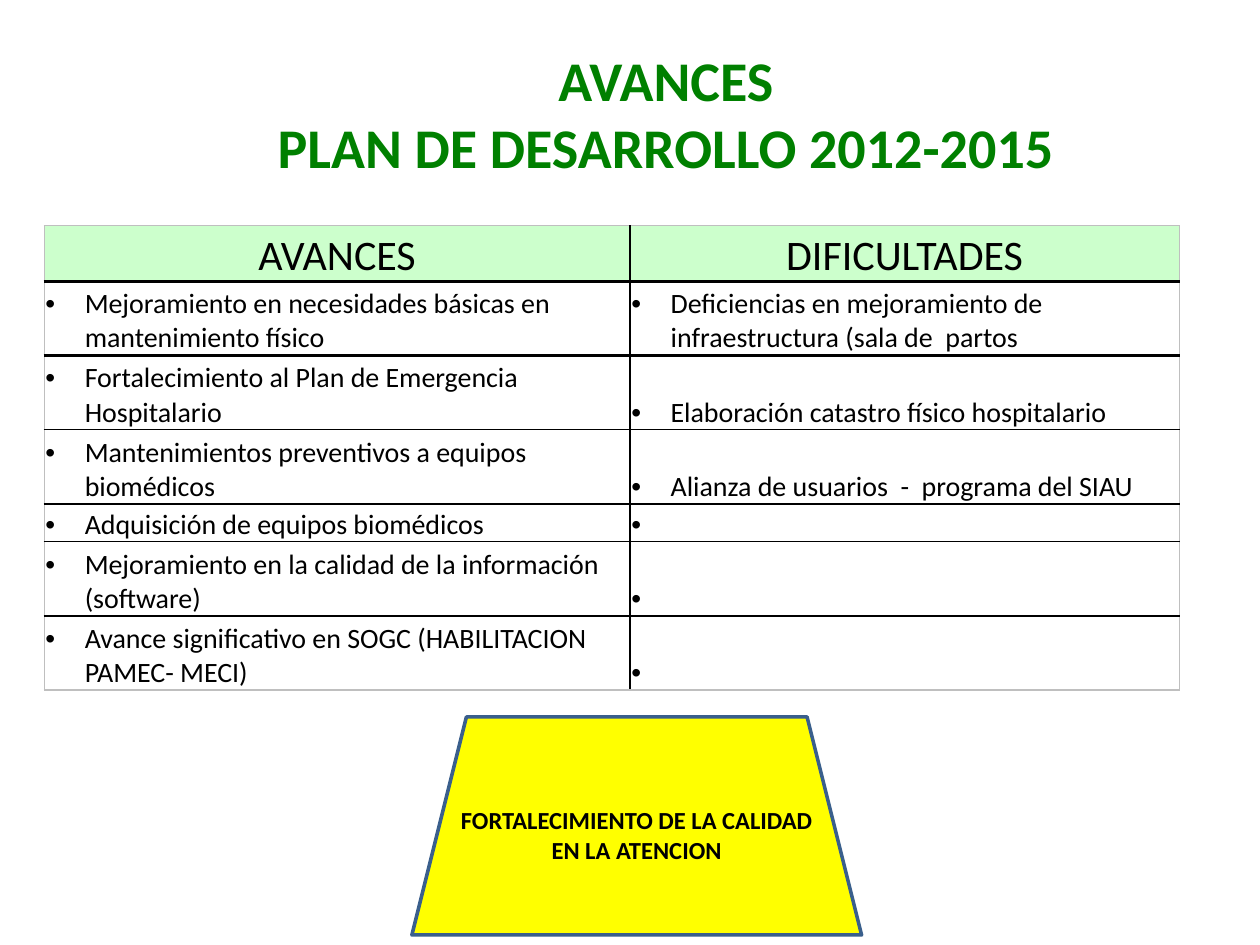
from lxml import etree
from pptx import Presentation
from pptx.dml import color
from pptx.enum import shapes, text
from pptx.oxml import ns
from pptx.util import Pt

FONT = "Calibri"
HEADERS = ["AVANCES", "DIFICULTADES"]
ROWS = [
    ("Mejoramiento en necesidades básicas en mantenimiento físico",
     "Deficiencias en mejoramiento de infraestructura (sala de  partos"),
    ("Fortalecimiento al Plan de Emergencia Hospitalario",
     "Elaboración catastro físico hospitalario"),
    ("Mantenimientos preventivos a equipos biomédicos",
     "Alianza de usuarios  -  programa del SIAU"),
    ("Adquisición de equipos biomédicos", " "),
    ("Mejoramiento en la calidad de la información (software)", " "),
    ("Avance significativo en SOGC (HABILITACION  PAMEC- MECI)", " "),
]
COL_WIDTHS = [334.8, 313.9]
ROW_HEIGHTS = [31.9, 42.4, 42.4, 42.4, 21.6, 42.4, 42.4]


def rgb(value):
    """Return the colour for a hex string."""
    return color.RGBColor.from_string(value)


def style(p, size, hex_color="000000", bold=False, align=text.PP_ALIGN.CENTER):
    """Set the font and alignment of a paragraph."""
    p.alignment = align
    p.font.name, p.font.size, p.font.bold = FONT, Pt(size), bold
    p.font.color.rgb = rgb(hex_color)


def add_bullet(p, indent):
    """Give a paragraph a hanging bullet."""
    pPr = p._p.get_or_add_pPr()
    pPr.set("marL", str(Pt(indent)))
    pPr.set("indent", str(Pt(-indent)))
    bu_font = etree.Element(ns.qn("a:buFont"), typeface="Arial")
    bu_char = etree.Element(ns.qn("a:buChar"), char="•")
    pPr.insert(0, bu_font)
    pPr.insert(1, bu_char)


def set_border(cell, side, hex_color, width):
    """Draw one side of a table cell."""
    tcPr = cell._tc.get_or_add_tcPr()
    ln = etree.SubElement(tcPr, ns.qn(f"a:ln{side}"), w=str(Pt(width)))
    fill = etree.SubElement(ln, ns.qn("a:solidFill"))
    etree.SubElement(fill, ns.qn("a:srgbClr"), val=hex_color)


def add_title(s, x, y, w, h):
    """Place the two-line title."""
    sp = s.shapes.title
    sp.left, sp.top, sp.width, sp.height = map(Pt, (x, y, w, h))
    tf = sp.text_frame
    tf.word_wrap = True
    tf.auto_size = text.MSO_AUTO_SIZE.NONE
    tf.vertical_anchor = text.MSO_ANCHOR.TOP
    tf.text = "AVANCES \nPLAN DE DESARROLLO 2012-2015 "
    for p in tf.paragraphs:
        style(p, 32, "008000", bold=True)


def fill_cell(cell, words, is_header):
    """Write and format one table cell."""
    cell.margin_left = cell.margin_right = cell.margin_top = Pt(0.75)
    cell.margin_bottom = Pt(0)
    cell.vertical_anchor = text.MSO_ANCHOR.BOTTOM
    cell.text = words
    p = cell.text_frame.paragraphs[0]
    if is_header:
        style(p, 24)
        cell.fill.solid()
        cell.fill.fore_color.rgb = rgb("CCFFCC")
    else:
        style(p, 16, align=text.PP_ALIGN.LEFT)
        add_bullet(p, 22.5)
        cell.fill.background()


def add_progress_table(s, x, y, w, h):
    """Place the table of advances and difficulties."""
    rows = [HEADERS, *ROWS]
    last_row, last_col = len(rows) - 1, len(HEADERS) - 1
    table = s.shapes.add_table(len(rows), len(HEADERS), Pt(x), Pt(y), Pt(w), Pt(h)).table
    table.horz_banding = table.first_row = False
    for col, width in zip(table.columns, COL_WIDTHS):
        col.width = Pt(width)
    for row, height in zip(table.rows, ROW_HEIGHTS):
        row.height = Pt(height)
    outer, divider = ("BFBFBF", 0.75), ("000000", 1.5)
    rules = [outer, divider, divider] + [("000000", 1)] * (last_row - 2) + [outer]
    for i, row in enumerate(rows):
        for j, words in enumerate(row):
            cell = table.cell(i, j)
            set_border(cell, "L", *(outer if j == 0 else divider))
            set_border(cell, "R", *(outer if j == last_col else divider))
            set_border(cell, "T", *rules[i])
            set_border(cell, "B", *rules[i + 1])
            fill_cell(cell, words, i == 0)


def add_goal(s, x, y, w, h):
    """Place the yellow trapezoid with the goal."""
    sp = s.shapes.add_shape(shapes.MSO_SHAPE.TRAPEZOID, Pt(x), Pt(y), Pt(w), Pt(h))
    sp.shadow.inherit = False
    sp.fill.solid()
    sp.fill.fore_color.rgb = rgb("FFFF00")
    sp.line.color.rgb = rgb("3A5F8C")
    sp.line.width = Pt(2)
    tf = sp.text_frame
    tf.word_wrap = True
    tf.vertical_anchor = text.MSO_ANCHOR.MIDDLE
    tf.text = "FORTALECIMIENTO DE LA CALIDAD EN LA ATENCION"
    style(tf.paragraphs[0], 14, bold=True)


def main():
    """Build and save the slide."""
    prs = Presentation()
    prs.slide_width, prs.slide_height = Pt(720), Pt(540)
    s = prs.slides.add_slide(prs.slide_layouts[5])
    add_goal(s, 235.4, 409.7, 257, 124.6)
    add_progress_table(s, 25.2, 128.9, sum(COL_WIDTHS), sum(ROW_HEIGHTS))
    add_title(s, 95.8, 22.3, 576.7, 85)
    prs.save("out.pptx")


if __name__ == "__main__":
    main()
